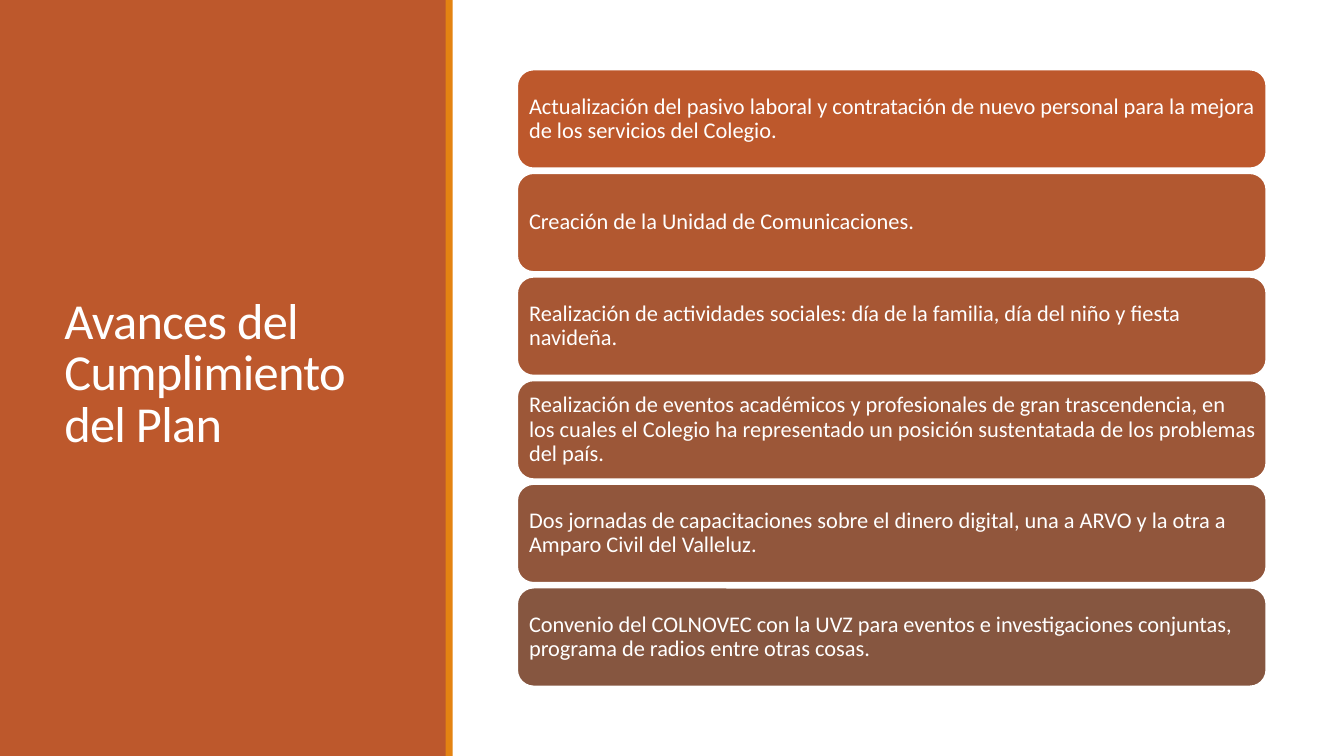
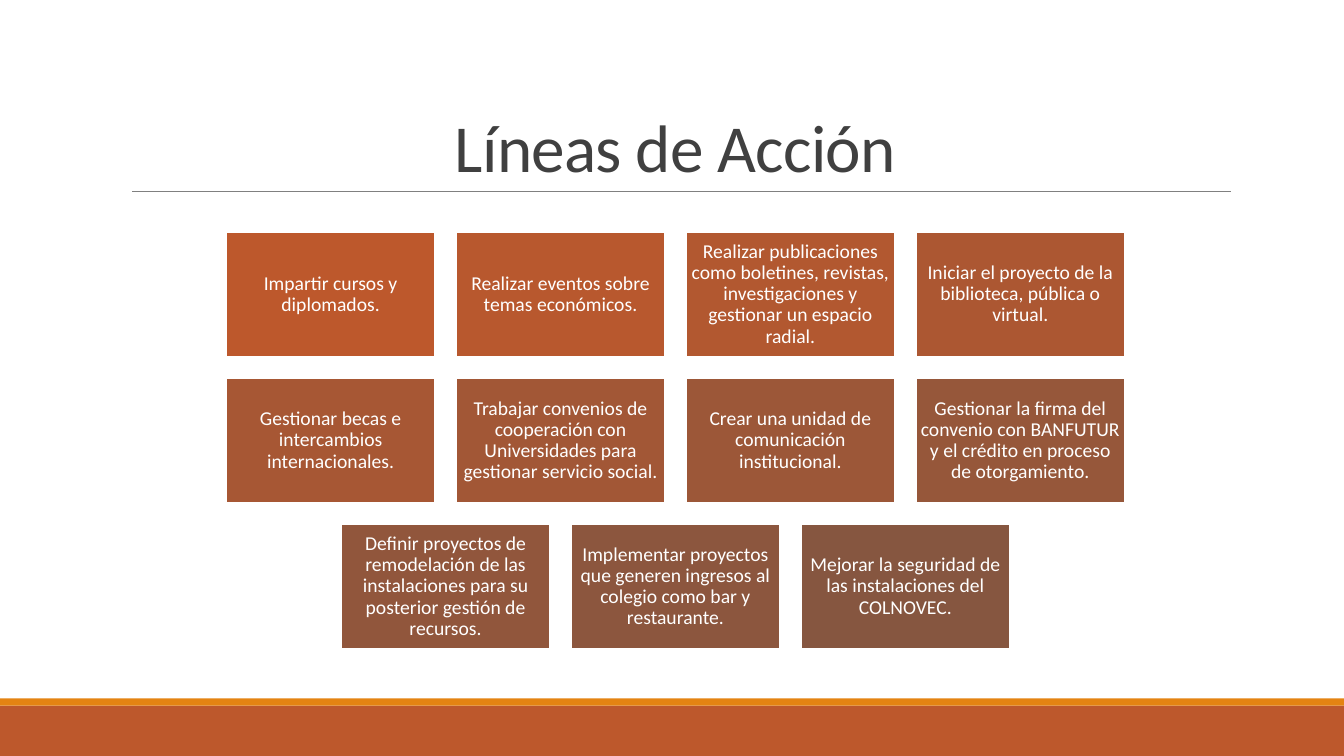
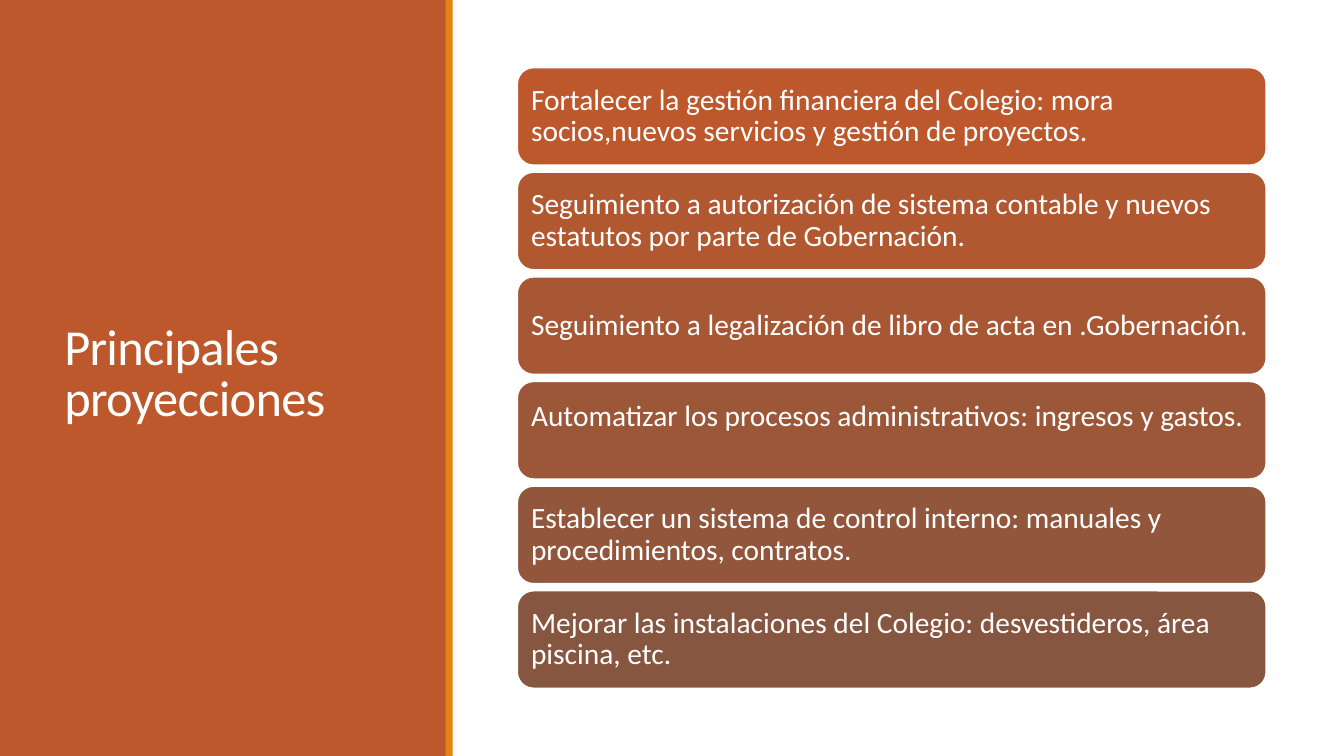
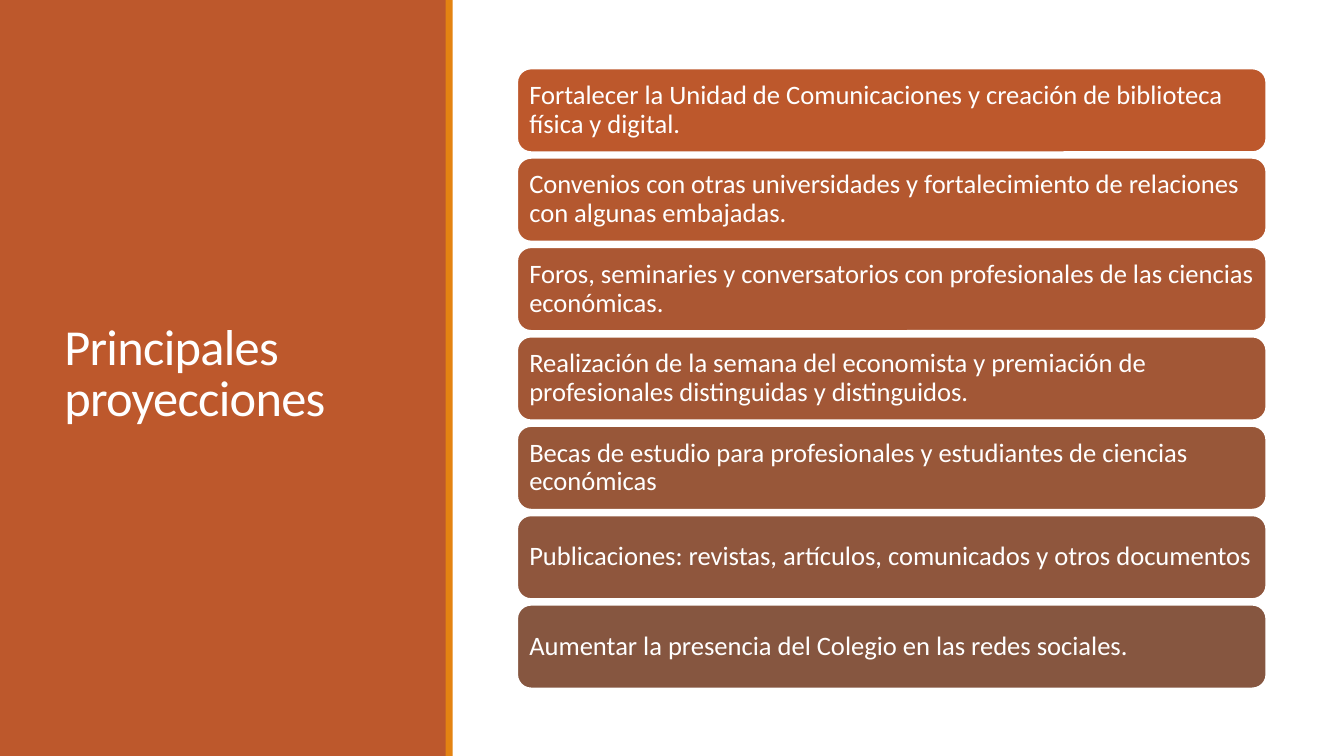
import pptx
import pptx.util
import pptx.dml.color
import pptx.enum.shapes
import pptx.enum.text
import lxml.etree

Inches = pptx.util.Inches
Pt = pptx.util.Pt
SHAPE = pptx.enum.shapes.MSO_SHAPE
ALIGN = pptx.enum.text.PP_ALIGN
ANCHOR = pptx.enum.text.MSO_ANCHOR

COLOURS = {
    "rust": "BD582C",
    "brown": "865640",
    "orange": "E48312",
    "white": "FFFFFF",
    "dark": "404040",
    "grey": "808080",
}
FONT = "Calibri"
SLIDE_WIDTH, SLIDE_HEIGHT = 13.33, 7.5

LIST_LEFT, LIST_WIDTH = 5.13, 7.43
CELL_WIDTH, CELL_HEIGHT, CELL_GAP = 2.07, 1.24, 0.21
GRID_TOP, GRID_CENTRE = 2.3, 6.7

SIDE_TITLE = {"box": (0.54, 0.57, 3.37, 6.31), "size": 36, "colour": "white",
              "align": ALIGN.LEFT, "anchor": ANCHOR.MIDDLE}
TOP_TITLE = {"box": (1.2, 0.31, 11, 1.59), "size": 48, "colour": "dark",
             "align": ALIGN.CENTER, "anchor": ANCHOR.BOTTOM}

PROGRESS = {
    "title": "Avances del Cumplimiento del Plan",
    "top": 0.69, "bottom": 6.81, "height": 0.98, "size": 16, "inset": 0.07,
    "items": [
        "Actualización del pasivo laboral y contratación de nuevo personal para la mejora de los servicios del Colegio.",
        "Creación de la Unidad de Comunicaciones.",
        "Realización de actividades sociales: día de la familia, día del niño y fiesta navideña.",
        "Realización de eventos académicos y profesionales de gran trascendencia, en los cuales el Colegio ha representado un posición sustentatada de los problemas del país.",
        "Dos jornadas de capacitaciones sobre el dinero digital, una a ARVO y la otra a Amparo Civil del Valleluz.",
        "Convenio del COLNOVEC con la UVZ para eventos e investigaciones conjuntas, programa de radios entre otras cosas.",
    ],
}
ACTIONS = {
    "title": "Líneas de Acción",
    "rows": [
        ["Impartir cursos y diplomados.",
         "Realizar eventos sobre temas económicos.",
         "Realizar publicaciones como boletines, revistas, investigaciones y gestionar un espacio radial.",
         "Iniciar el proyecto de la biblioteca, pública o virtual."],
        ["Gestionar becas e intercambios internacionales.",
         "Trabajar convenios de cooperación con Universidades para gestionar servicio social.",
         "Crear una unidad de comunicación institucional.",
         "Gestionar la firma del convenio con BANFUTUR y el crédito en proceso de otorgamiento."],
        ["Definir proyectos de remodelación de las instalaciones para su posterior gestión de recursos.",
         "Implementar proyectos que generen ingresos al colegio como bar y restaurante.",
         "Mejorar la seguridad de las instalaciones del COLNOVEC."],
    ],
}
MANAGEMENT_PLANS = {
    "title": "Principales proyecciones",
    "top": 0.67, "bottom": 6.83, "height": 0.97, "size": 21, "inset": 0.09,
    "raised": {3: 0.26},
    "items": [
        "Fortalecer la gestión financiera del Colegio: mora socios,nuevos servicios y gestión de proyectos.",
        "Seguimiento a autorización de sistema contable y nuevos estatutos por parte de Gobernación.",
        "Seguimiento a legalización de libro de acta en .Gobernación.",
        "Automatizar los procesos administrativos: ingresos y gastos.",
        "Establecer un sistema de control interno: manuales y procedimientos, contratos.",
        "Mejorar las instalaciones del Colegio: desvestideros, área piscina, etc.",
    ],
}
ACADEMIC_PLANS = {
    "title": "Principales proyecciones",
    "top": 0.68, "bottom": 6.83, "height": 0.83, "size": 19, "inset": 0.08,
    "items": [
        "Fortalecer la Unidad de Comunicaciones y creación de biblioteca física y digital.",
        "Convenios con otras universidades y fortalecimiento de relaciones con algunas embajadas.",
        "Foros, seminaries y conversatorios con profesionales de las ciencias económicas.",
        "Realización de la semana del economista y premiación de profesionales distinguidas y distinguidos.",
        "Becas de estudio para profesionales y estudiantes de ciencias económicas",
        "Publicaciones: revistas, artículos, comunicados y otros documentos",
        "Aumentar la presencia del Colegio en las redes sociales.",
    ],
}


def rgb(value):
    return pptx.dml.color.RGBColor.from_string(value)


def apply(target, values):
    for name, value in values.items():
        setattr(target, name, value)


def blend(position):
    start, end = (rgb(COLOURS[name]) for name in ("rust", "brown"))
    return "".join(f"{round(a + (b - a) * position):02X}" for a, b in zip(start, end))


def write(shape, text, size, colour, align, anchor, spacing, insets):
    frame = shape.text_frame
    margins = dict(zip(("margin_left", "margin_top", "margin_right", "margin_bottom"),
                       map(Inches, insets)))
    apply(frame, {"word_wrap": True, "vertical_anchor": anchor, **margins})
    paragraph = frame.paragraphs[0]
    apply(paragraph, {"alignment": align, "line_spacing": spacing})
    run = paragraph.add_run()
    run.text = text
    apply(run.font, {"name": FONT, "size": Pt(size)})
    run.font.color.rgb = rgb(COLOURS[colour])
    return run


def add_block(slide, kind, box, fill, outlined=False):
    shape = slide.shapes.add_shape(kind, *map(Inches, box))
    shape.shadow.inherit = False
    shape.fill.solid()
    shape.fill.fore_color.rgb = rgb(fill)
    if outlined:
        shape.line.color.rgb = rgb(COLOURS["white"])
        shape.line.width = Pt(1.25)
    else:
        shape.line.fill.background()
    return shape


def add_title(slide, text, style):
    shape = slide.shapes.add_textbox(*map(Inches, style["box"]))
    run = write(shape, text, style["size"], style["colour"], style["align"],
                style["anchor"], 0.85, (0.1, 0.05, 0.1, 0.05))
    run.font._element.set("spc", "-50")


def add_rule(slide, left, right, y):
    rule = slide.shapes.add_connector(pptx.enum.shapes.MSO_CONNECTOR.STRAIGHT,
                                      *map(Inches, (left, y, right, y)))
    rule.line.color.rgb = rgb(COLOURS["grey"])
    rule.line.width = Pt(0.5)
    lxml.etree.SubElement(rule._element.spPr, pptx.oxml.ns.qn("a:effectLst"))


def build_list(slide, content):
    add_block(slide, SHAPE.RECTANGLE, (0, 0, 4.43, SLIDE_HEIGHT), COLOURS["rust"])
    add_title(slide, content["title"], SIDE_TITLE)
    add_block(slide, SHAPE.RECTANGLE, (4.42, 0, 0.07, SLIDE_HEIGHT), COLOURS["orange"])
    items, height, inset = content["items"], content["height"], content["inset"]
    last = len(items) - 1
    pitch = (content["bottom"] - content["top"] - height) / last
    for index, text in enumerate(items):
        box = (LIST_LEFT, content["top"] + index * pitch, LIST_WIDTH, height)
        shape = add_block(slide, SHAPE.ROUNDED_RECTANGLE, box, blend(index / last), True)
        lift = content.get("raised", {}).get(index, 0)
        write(shape, text, content["size"], "white", ALIGN.LEFT, ANCHOR.MIDDLE, 0.9,
              (inset, inset, inset - 0.02, inset + lift))


def build_grid(slide, content):
    add_block(slide, SHAPE.RECTANGLE, (0, 7, SLIDE_WIDTH, 0.5), COLOURS["rust"])
    add_block(slide, SHAPE.RECTANGLE, (0, 6.93, SLIDE_WIDTH, 0.07), COLOURS["orange"])
    add_rule(slide, 1.31, 12.21, 1.9)
    add_title(slide, content["title"], TOP_TITLE)
    last = sum(map(len, content["rows"])) - 1
    index = 0
    for row, texts in enumerate(content["rows"]):
        row_width = len(texts) * (CELL_WIDTH + CELL_GAP) - CELL_GAP
        top = GRID_TOP + row * (CELL_HEIGHT + CELL_GAP)
        for column, text in enumerate(texts):
            left = GRID_CENTRE - row_width / 2 + column * (CELL_WIDTH + CELL_GAP)
            shape = add_block(slide, SHAPE.RECTANGLE, (left, top, CELL_WIDTH, CELL_HEIGHT),
                              blend(index / last), True)
            write(shape, text, 14, "white", ALIGN.CENTER, ANCHOR.MIDDLE, 0.9, [0.04] * 4)
            index += 1


def main():
    presentation = pptx.Presentation()
    apply(presentation, {"slide_width": Inches(SLIDE_WIDTH),
                         "slide_height": Inches(SLIDE_HEIGHT)})
    for build, content in ((build_list, PROGRESS), (build_grid, ACTIONS),
                           (build_list, MANAGEMENT_PLANS), (build_list, ACADEMIC_PLANS)):
        build(presentation.slides.add_slide(presentation.slide_layouts[6]), content)
    presentation.save("out.pptx")


if __name__ == "__main__":
    main()
